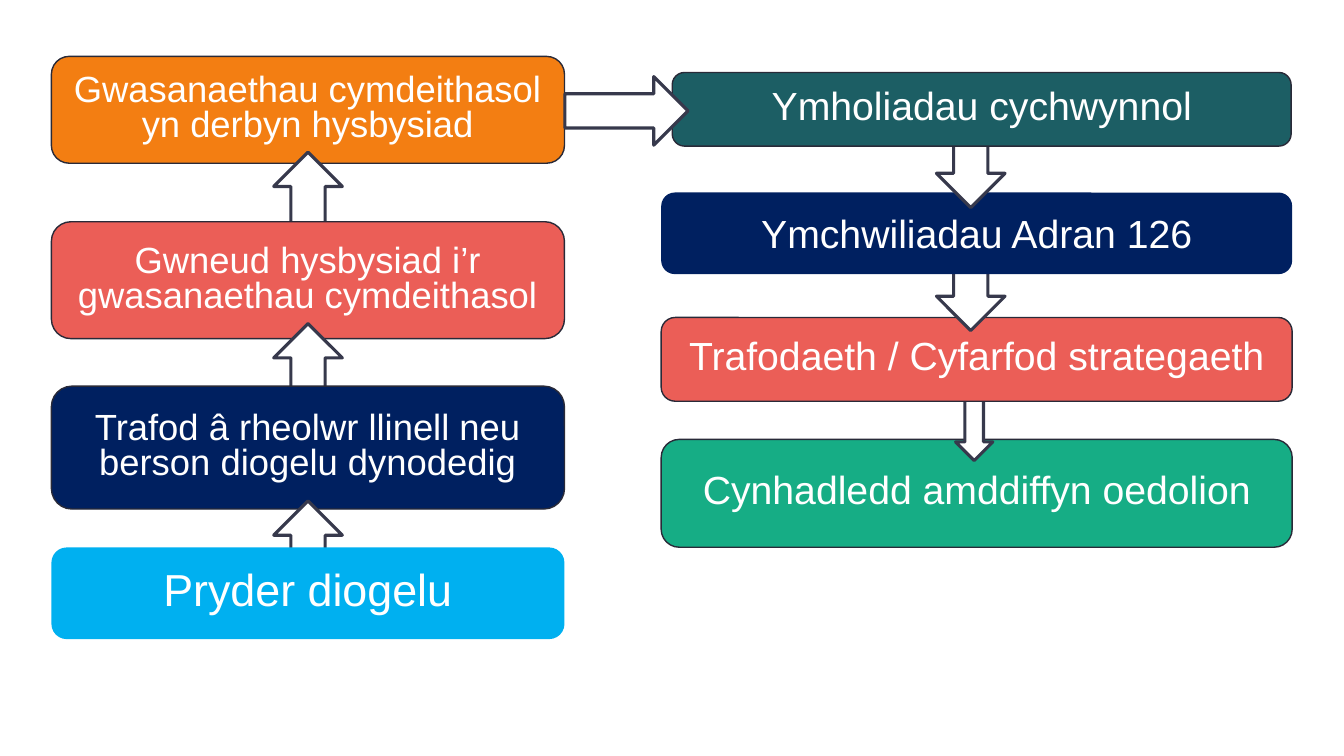
from pptx import Presentation
from pptx.dml.color import RGBColor
from pptx.enum import shapes, text
from pptx.util import Pt

# Theme
THEME = {
    "font": "Arial", "white": "FFFFFF", "outline": "292A38", "arrow_line": "37394C",
    "orange": "F37E12", "coral": "EB5E57", "navy": "002060",
    "sky": "00B0F0", "teal": "1C5E64", "green": "16AD85",
    "report_size": 26, "response_size": 28, "concern_size": 32,
    "outline_width": 1, "arrow_width": 2.25,
}
SHAPE = shapes.MSO_SHAPE

# Content in drawing order: each arrow covers its target and starts behind its source
# Boxes: wording, fill, text size, top, height, outlined, line spacing
RESPONSE_BOXES = [
    ("Cynhadledd amddiffyn oedolion", "green", "response_size", 313.9, 77, True, 0.8),
    ("Trafodaeth / Cyfarfod strategaeth", "coral", "response_size", 226.8, 59.8, True, 0.8),
    ("Ymchwiliadau Adran 126", "navy", "response_size", 137.5, 58.3, False, 1.0),
    ("Ymholiadau cychwynnol", "teal", "response_size", 51.8, 52.6, True, 0.8),
]
REPORT_BOXES = [
    ("Gwasanaethau cymdeithasol yn derbyn hysbysiad", "orange", "report_size", 40.3, 76.3, True, 0.8),
    ("Gwneud hysbysiad i’r\vgwasanaethau cymdeithasol", "coral", "report_size", 158.4, 83.5, True, 0.8),
    ("Trafod â rheolwr llinell neu berson diogelu dynodedig", "navy", "report_size",
     275.8, 87.8, True, 0.8),
    ("Pryder diogelu", "sky", "concern_size", 391, 65.5, False, 0.8),
]
# Arrows between neighbouring boxes: centre, top, width, height
RESPONSE_ARROWS = [(695.9, 257, 26.6, 72), (693.4, 177.8, 49, 58.3), (693.4, 90, 49, 58.3)]
REPORT_ARROWS = [(220, top, 49, 58.3) for top in (108.7, 231.1, 357.8)]

REPORT_SPAN = (36.7, 366.5)
RESPONSE_SPAN = (472.3, 450.7)
FIRST_RESPONSE_SPAN = (480.2, 442.1)


def color(name):
    return RGBColor.from_string(THEME[name])


def set_all(target, formats):
    for name, value in formats.items():
        setattr(target, name, value)


def add_filled(slide, kind, bounds, fill, line, line_width):
    shape = slide.shapes.add_shape(kind, *(Pt(value) for value in bounds))
    shape.shadow.inherit = False
    shape.fill.solid()
    shape.fill.fore_color.rgb = color(fill)
    if line:
        shape.line.color.rgb = color(line)
        shape.line.width = Pt(THEME[line_width])
    else:
        shape.line.fill.background()
    return shape


def add_box(slide, box, span):
    wording, fill, size, top, height, outlined, spacing = box
    left, width = span
    shape = add_filled(slide, SHAPE.ROUNDED_RECTANGLE, (left, top, width, height),
                       fill, "outline" if outlined else None, "outline_width")
    set_all(shape.text_frame, {"word_wrap": True, "vertical_anchor": text.MSO_ANCHOR.MIDDLE})
    paragraph = shape.text_frame.paragraphs[0]
    paragraph.text = wording
    set_all(paragraph, {"alignment": text.PP_ALIGN.CENTER, "line_spacing": spacing})
    for run in paragraph.runs:
        set_all(run.font, {"name": THEME["font"], "size": Pt(THEME[size])})
        run.font.color.rgb = color("white")


def add_arrow(slide, kind, center, top, width, height):
    add_filled(slide, kind, (center - width / 2, top, width, height),
               "white", "arrow_line", "arrow_width")


def add_column(slide, boxes, spans, arrows, kind):
    for index, (box, span) in enumerate(zip(boxes, spans)):
        add_box(slide, box, span)
        if index < len(arrows):
            add_arrow(slide, kind, *arrows[index])


def main():
    presentation = Presentation()
    set_all(presentation, {"slide_width": Pt(960), "slide_height": Pt(540)})
    slide = presentation.slides.add_slide(presentation.slide_layouts[6])

    # Response steps on the right, reporting steps on the left
    add_column(slide, RESPONSE_BOXES, [RESPONSE_SPAN] * 3 + [FIRST_RESPONSE_SPAN],
               RESPONSE_ARROWS, SHAPE.DOWN_ARROW)
    add_column(slide, REPORT_BOXES, [REPORT_SPAN] * 4, REPORT_ARROWS, SHAPE.UP_ARROW)

    # Link from reporting to response
    add_arrow(slide, SHAPE.RIGHT_ARROW, 447.5, 54.7, 88, 49)

    presentation.save("out.pptx")


if __name__ == "__main__":
    main()
